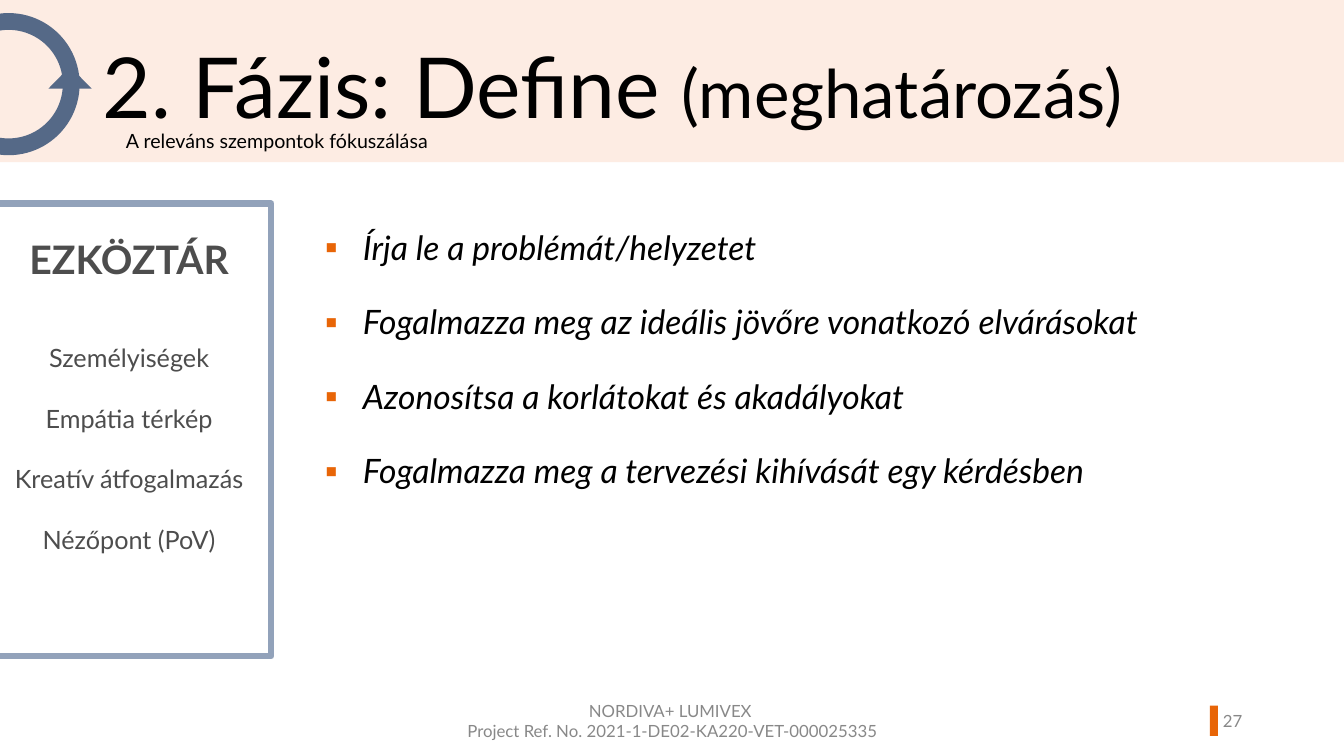
from dataclasses import dataclass

from lxml import etree
from pptx import Presentation
from pptx.dml.color import RGBColor
from pptx.enum.shapes import MSO_SHAPE
from pptx.enum.text import MSO_ANCHOR, MSO_AUTO_SIZE, PP_ALIGN
from pptx.oxml.ns import qn
from pptx.util import Inches, Pt

RECTANGLE, DONUT = MSO_SHAPE.RECTANGLE, MSO_SHAPE.DONUT
TRIANGLE = MSO_SHAPE.ISOSCELES_TRIANGLE
LEFT, CENTER, RIGHT = PP_ALIGN.LEFT, PP_ALIGN.CENTER, PP_ALIGN.RIGHT
TOP, MIDDLE = MSO_ANCHOR.TOP, MSO_ANCHOR.MIDDLE


@dataclass(frozen=True)
class Theme:
    font: str = "Lato"
    black: str = "000000"
    white: str = "FFFFFF"
    band: str = "FDECE3"
    accent: str = "E86507"
    loop: str = "556987"
    panel_line: str = "92A2BA"
    panel_text: str = "4D4D4D"
    footer_text: str = "888888"
    title_size: int = 60
    title_note_size: int = 48
    panel_heading_size: int = 28
    body_size: int = 24
    tool_size: int = 18
    subtitle_size: int = 14
    footer_size: int = 12


THEME = Theme()

STEPS = [
    "Írja le a problémát/helyzetet",
    "Fogalmazza meg az ideális jövőre vonatkozó elvárásokat",
    "Azonosítsa a korlátokat és akadályokat",
    "Fogalmazza meg a tervezési kihívását egy kérdésben",
]
TOOLS = ["Személyiségek", "Empátia térkép", "Kreatív átfogalmazás", "Nézőpont (PoV)"]


def set_attributes(target, values):
    for name, value in values.items():
        setattr(target, name, value)


def place(shape, left, top, width, height):
    set_attributes(shape, {
        "left": Inches(left), "top": Inches(top),
        "width": Inches(width), "height": Inches(height),
    })


def add_run(paragraph, text, size, color=THEME.black, **styles):
    run = paragraph.add_run()
    run.text = text
    set_attributes(run.font, {"name": THEME.font, "size": Pt(size), **styles})
    run.font.color.rgb = RGBColor.from_string(color)


def format_paragraph(paragraph, alignment=LEFT, line_spacing=1.0, space_before=0):
    set_attributes(paragraph, {
        "alignment": alignment, "line_spacing": line_spacing,
        "space_before": Pt(space_before), "space_after": Pt(0),
    })


def prepare_frame(frame, anchor=TOP, margin_top=0.05):
    set_attributes(frame, {
        "word_wrap": True, "auto_size": MSO_AUTO_SIZE.NONE, "vertical_anchor": anchor,
        "margin_left": Inches(0.1), "margin_right": Inches(0.1),
        "margin_top": Inches(margin_top), "margin_bottom": Inches(0.05),
    })


def next_paragraph(frame, index):
    """Return the frame's own first paragraph, or a new one after it."""
    return frame.add_paragraph() if index else frame.paragraphs[0]


def add_filled_shape(shapes, kind, box, color, adjustment=None):
    shape = shapes.add_shape(kind, *map(Inches, box))
    shape.shadow.inherit = False
    shape.fill.solid()
    shape.fill.fore_color.rgb = RGBColor.from_string(color)
    shape.line.fill.background()
    if adjustment is not None:
        shape.adjustments[0] = adjustment
    return shape


def add_label(slide, box, lines, size, color, alignment=LEFT, anchor=TOP):
    frame = slide.shapes.add_textbox(*map(Inches, box)).text_frame
    prepare_frame(frame, anchor)
    paragraph = frame.paragraphs[0]
    format_paragraph(paragraph, alignment)
    for index, line in enumerate(lines):
        if index:
            paragraph.add_line_break()
        add_run(paragraph, line, size, color)


def set_bullet(paragraph, character, color, indent):
    properties = paragraph._p.get_or_add_pPr()
    properties.set("marL", str(Inches(indent)))
    properties.set("indent", str(-Inches(indent)))
    bullet_color = etree.SubElement(properties, qn("a:buClr"))
    etree.SubElement(bullet_color, qn("a:srgbClr"), val=color)
    etree.SubElement(properties, qn("a:buFont"), typeface=THEME.font)
    etree.SubElement(properties, qn("a:buChar"), char=character)


def add_band(slide):
    """Put the heading band behind the placeholders."""
    band = add_filled_shape(slide.shapes, RECTANGLE, (0, 0, 13.33, 1.61), THEME.band)
    slide.shapes._spTree.insert(2, band._element)


def fill_title(title):
    place(title, 0.92, 0.41, 11.13, 0.85)
    prepare_frame(title.text_frame)
    paragraph = title.text_frame.paragraphs[0]
    format_paragraph(paragraph, line_spacing=0.9)
    add_run(paragraph, "2. Fázis: Define ", THEME.title_size)
    add_run(paragraph, "(meghatározás)", THEME.title_note_size)


def fill_steps(body):
    place(body, 3.12, 2, 9.3, 4.76)
    prepare_frame(body.text_frame)
    for index, step in enumerate(STEPS):
        paragraph = next_paragraph(body.text_frame, index)
        format_paragraph(paragraph, line_spacing=1.5, space_before=10 if index else 0)
        set_bullet(paragraph, "▪", THEME.accent, 0.38)
        add_run(paragraph, step, THEME.body_size, italic=True)


def add_loop_arrow(slide):
    group = slide.shapes.add_group_shape()
    add_filled_shape(group.shapes, DONUT, (-0.62, 0.13, 1.41, 1.41), THEME.loop, 0.118)
    add_filled_shape(group.shapes, TRIANGLE, (0.48, 0.66, 0.43, 0.22), THEME.loop)


def add_tool_panel(slide):
    panel = add_filled_shape(slide.shapes, RECTANGLE, (-0.13, 2.02, 2.82, 4.49), THEME.white)
    panel.line.color.rgb = RGBColor.from_string(THEME.panel_line)
    panel.line.width = Pt(4.5)
    frame = panel.text_frame
    prepare_frame(frame, margin_top=0.31)
    format_paragraph(frame.paragraphs[0], CENTER)
    add_run(frame.paragraphs[0], "EZKÖZTÁR", THEME.panel_heading_size,
            THEME.panel_text, bold=True)
    row_gap = 1.2 * THEME.tool_size
    for index, tool in enumerate(TOOLS):
        paragraph = frame.add_paragraph()
        format_paragraph(paragraph, CENTER, space_before=row_gap if index else 2 * row_gap)
        add_run(paragraph, tool, THEME.tool_size, THEME.panel_text)


def add_footer(slide):
    add_filled_shape(slide.shapes, RECTANGLE, (12, 7, 0.08, 0.3), THEME.accent)
    add_label(slide, (11.77, 6.95, 0.65, 0.4), ["27"],
              THEME.footer_size, THEME.footer_text, RIGHT, MIDDLE)
    add_label(slide, (4.42, 6.95, 4.5, 0.4),
              ["NORDIVA+ LUMIVEX ", "Project Ref. No. 2021-1-DE02-KA220-VET-000025335"],
              THEME.footer_size, THEME.footer_text, CENTER, MIDDLE)


def main():
    presentation = Presentation()
    presentation.slide_width = Inches(13.33)
    presentation.slide_height = Inches(7.5)
    slide = presentation.slides.add_slide(presentation.slide_layouts[1])
    add_band(slide)
    fill_title(slide.shapes.title)
    fill_steps(slide.placeholders[1])
    add_loop_arrow(slide)
    add_tool_panel(slide)
    add_label(slide, (1.15, 1.23, 3.88, 0.34), ["A releváns szempontok fókuszálása"],
              THEME.subtitle_size, THEME.black)
    add_footer(slide)
    presentation.save("out.pptx")


if __name__ == "__main__":
    main()
